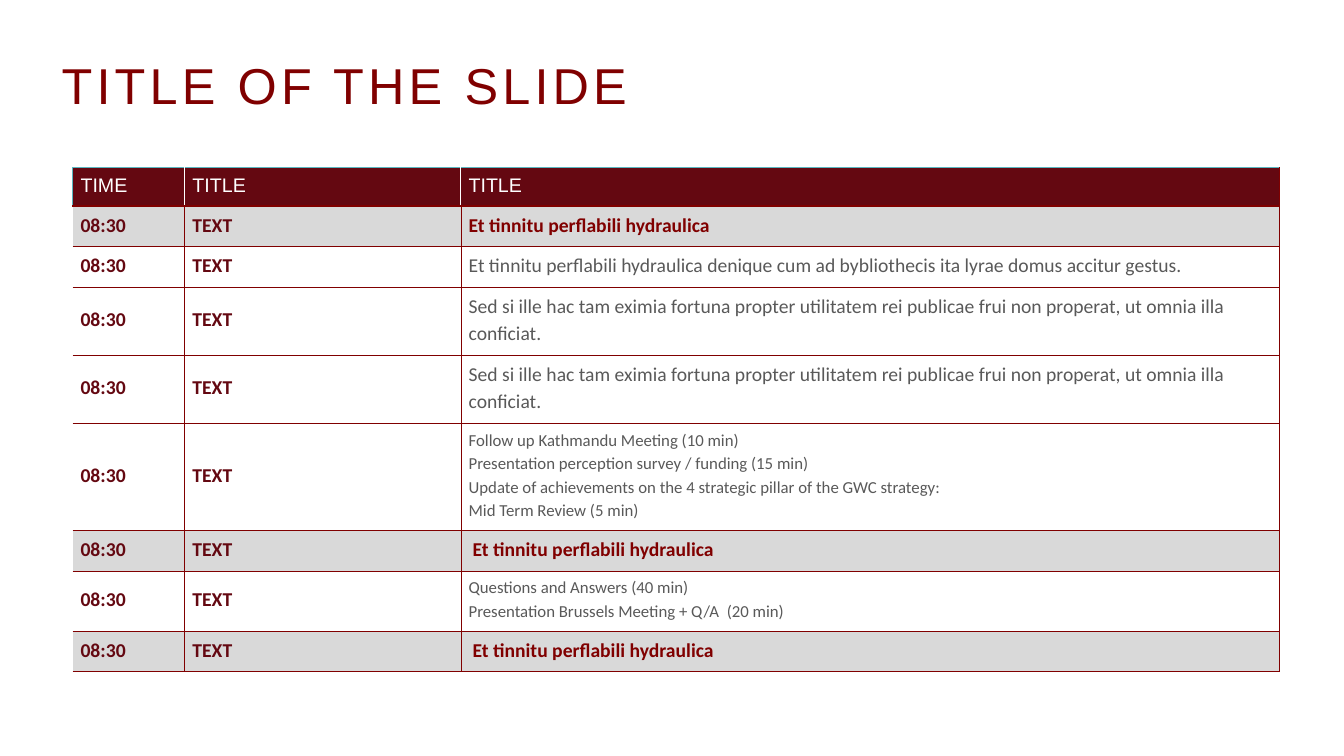
"""Build an agenda slide with a title and a three-column timetable."""
from lxml import etree
from pptx import Presentation
from pptx.dml.color import RGBColor
from pptx.enum.text import MSO_ANCHOR, MSO_AUTO_SIZE, PP_ALIGN
from pptx.oxml.ns import qn
from pptx.util import Cm, Pt

MIDDLE = MSO_ANCHOR.MIDDLE
LEFT = PP_ALIGN.LEFT
NO_AUTOFIT = MSO_AUTO_SIZE.NONE
TITLE_ONLY = 5

COLORS = {
    "maroon": "800000",
    "wine": "640811",
    "teal": "58B6C0",
    "white": "FFFFFF",
    "band": "D9D9D9",
    "gray": "595959",
}
THIN, MEDIUM, THICK = 0.25, 0.5, 1
COLUMN_WIDTHS = [2.82, 6.96, 20.62]
HIGHLIGHT = "Et tinnitu perflabili hydraulica"
SENTENCE = (
    "Sed si ille hac tam eximia fortuna propter utilitatem rei publicae "
    "frui non properat, ut omnia illa conficiat."
)

# Each session: row height, kind, left inset and lines of the last column
SESSIONS = [
    (1, "band", 0.2, [HIGHLIGHT]),
    (1, "sentence", 0.2, [
        HIGHLIGHT + " denique cum ad bybliothecis ita lyrae domus accitur gestus."]),
    (1.7, "sentence", 0.2, [SENTENCE]),
    (1.7, "sentence", 0.2, [SENTENCE]),
    (2.7, "details", 0.2, [
        "Follow up Kathmandu Meeting (10 min)",
        "Presentation perception survey / funding (15 min)",
        "Update of achievements on the 4 strategic pillar of the GWC strategy:",
        "Mid Term Review (5 min)",
    ]),
    (1, "band", 0.3, [HIGHLIGHT]),
    (1.5, "details", 0.2, [
        "Questions and Answers (40 min)",
        "Presentation Brussels Meeting + Q/A  (20 min)",
    ]),
    (1, "band", 0.3, [HIGHLIGHT]),
]
CONTENT_STYLES = {
    "band": ("Calibri", 14, "maroon", True),
    "sentence": ("Calibri", 14, "gray", False),
    "details": ("Calibri", 12, "gray", False),
}
HEADER_STYLE = ("Arial", 14, "white", False)
LABEL_STYLE = ("Calibri", 14, "wine", True)


def write_cell(cell, lines, style, fill, inset=0.2):
    """Fill a cell with one paragraph per line."""
    name, size, color, bold = style
    cell.vertical_anchor = MIDDLE
    cell.margin_left, cell.margin_right = Cm(inset), Cm(0.2)
    cell.margin_top, cell.margin_bottom = Cm(0.1), Cm(0.23)
    if fill:
        cell.fill.solid()
        cell.fill.fore_color.rgb = RGBColor.from_string(COLORS[fill])
    else:
        cell.fill.background()
    for index, line in enumerate(lines):
        frame = cell.text_frame
        paragraph = frame.add_paragraph() if index else frame.paragraphs[0]
        paragraph.line_spacing = 1.15
        run = paragraph.add_run()
        run.text = line
        run.font.name = name
        run.font.size = Pt(size)
        run.font.bold = bold
        run.font.color.rgb = RGBColor.from_string(COLORS[color])


def set_borders(cell, borders):
    """Draw left, right, top and bottom borders, given in that order."""
    properties = cell._tc.get_or_add_tcPr()
    for position, (side, border) in enumerate(zip("LRTB", borders)):
        line = etree.Element(qn("a:ln" + side))
        properties.insert(position, line)
        if border is None:
            etree.SubElement(line, qn("a:noFill"))
            continue
        color, width = border
        line.set("w", str(Pt(width)))
        fill = etree.SubElement(line, qn("a:solidFill"))
        etree.SubElement(fill, qn("a:srgbClr"), val=COLORS[color])


presentation = Presentation()
presentation.slide_width, presentation.slide_height = Cm(33.87), Cm(19.05)
slide = presentation.slides.add_slide(presentation.slide_layouts[TITLE_ONLY])

title = slide.shapes.title
title.left, title.top, title.width, title.height = Cm(1.3), Cm(1.3), Cm(29.2), Cm(1.83)
title.text_frame.auto_size = NO_AUTOFIT
title.text_frame.vertical_anchor = MIDDLE
paragraph = title.text_frame.paragraphs[0]
paragraph.alignment = LEFT
paragraph.line_spacing = 0.9
run = paragraph.add_run()
run.text = "TITLE OF THE SLIDE"
run.font.name = "Arial"
run.font.size = Pt(36)
run.font.color.rgb = RGBColor.from_string(COLORS["maroon"])
run.font._element.set("spc", "300")

row_heights = [0.95] + [session[0] for session in SESSIONS]
table = slide.shapes.add_table(
    len(row_heights), len(COLUMN_WIDTHS), Cm(1.83), Cm(4.22),
    Cm(sum(COLUMN_WIDTHS)), Cm(sum(row_heights)),
).table
table.horz_banding = False
for column, width in zip(table.columns, COLUMN_WIDTHS):
    column.width = Cm(width)
for row, height in zip(table.rows, row_heights):
    row.height = Cm(height)

grid_line = ("maroon", THIN)
heavy_line = ("maroon", THICK)
header_top = ("teal", MEDIUM)
header_divider = ("white", MEDIUM)
for column, heading in enumerate(["TIME", "TITLE", "TITLE"]):
    cell = table.cell(0, column)
    write_cell(cell, [heading], HEADER_STYLE, "wine")
    left = header_divider if column else header_top
    right = grid_line if column == 2 else header_divider
    set_borders(cell, [left, right, header_top, heavy_line])

for row, (height, kind, inset, lines) in enumerate(SESSIONS, start=1):
    fill = "band" if kind == "band" else None
    write_cell(table.cell(row, 0), ["08:30"], LABEL_STYLE, fill)
    write_cell(table.cell(row, 1), ["TEXT"], LABEL_STYLE, fill)
    write_cell(table.cell(row, 2), lines, CONTENT_STYLES[kind], fill, inset)
    top = heavy_line if row == 1 else grid_line
    bottom = heavy_line if row == len(SESSIONS) else grid_line
    for column in range(len(COLUMN_WIDTHS)):
        left = grid_line if column else None
        set_borders(table.cell(row, column), [left, grid_line, top, bottom])

presentation.save("out.pptx")
